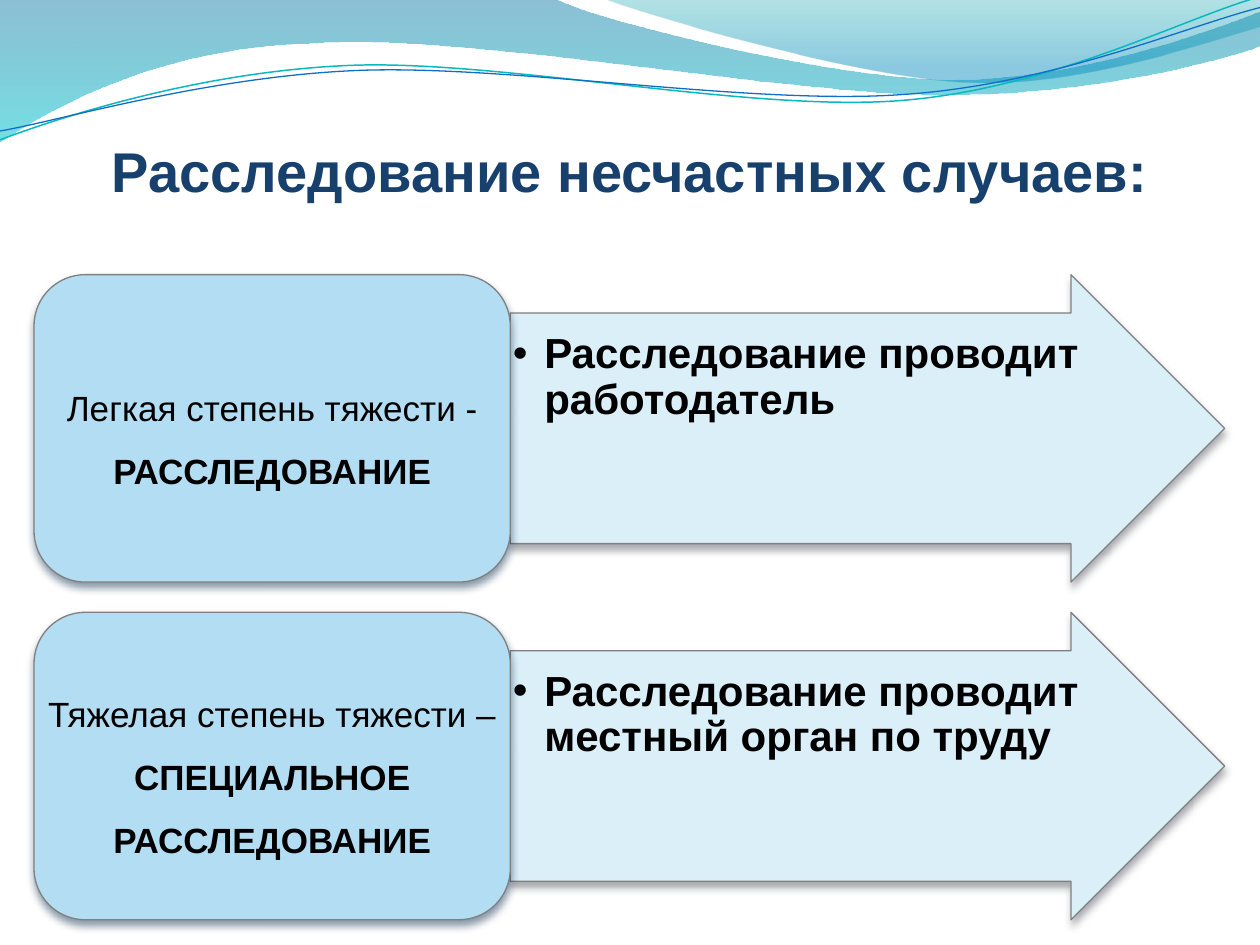
import pptx
import pptx.dml.color
import pptx.enum.shapes
import pptx.enum.text
import pptx.oxml
import pptx.oxml.ns
import pptx.util
from pptx.util import Inches

SHAPE = pptx.enum.shapes.MSO_SHAPE
ANCHOR = pptx.enum.text.MSO_ANCHOR
ALIGN = pptx.enum.text.PP_ALIGN
NAMESPACE = pptx.oxml.ns.nsdecls("a")

COLORS = {
    "title": "17406D", "text": "000000", "outline": "808080",
    "card": "B3DDF2", "arrow": "DBEFF9",
    "card_shadow": "042747", "arrow_shadow": "474B53",
    "wave_blue": "0074A1", "wave_cyan": "00C6CF",
    "crest_teal": "00A1A9", "crest_blue": "008BBF",
    "line_teal": "0AB8BF", "line_blue": "0F6FC6",
}
TITLE = "Расследование несчастных случаев:"
CASES = [
    ("Легкая степень тяжести - ", "РАССЛЕДОВАНИЕ", "Расследование проводит работодатель"),
    ("Тяжелая степень тяжести – ", "СПЕЦИАЛЬНОЕ РАССЛЕДОВАНИЕ",
     "Расследование проводит местный орган по труду"),
]

# Each outline is a list of steps: 2 numbers make a straight line, 6 a Bezier curve.
# Bands: steps, then gradient stops as (position, colour, opacity in percent).
BANDS = [
    ([(0, 0), (4.4, -0.01), (4.76, 0.17, 6.64, 0.63, 7.58, 0.63),
      (8.53, 0.63, 9.58, 0.26, 10, 0.09), (10.01, 0.36),
      (9.83, 0.44, 8.7, 0.76, 7.46, 0.75), (6.22, 0.75, 3.82, 0.28, 2.57, 0.34),
      (1.29, 0.36, 0.46, 0.83, -0.01, 1.13), (0, 0)],
     [(0, "wave_blue", 45), (1, "wave_cyan", 55)]),
    ([(4.79, -0.01), (5.09, 0.11, 6.82, 0.62, 7.69, 0.65),
      (8.56, 0.69, 9.61, 0.32, 10, 0.21), (10, 0), (4.79, -0.01)],
     [(0, "crest_teal", 30), (0.8, "crest_blue", 45)]),
]
# Strands: steps, colour, width in points.
STRANDS = [
    ([(0, 1.11), (0.48, 0.93, 1.58, 0.57, 2.77, 0.52),
      (3.95, 0.47, 5.93, 0.89, 7.13, 0.8), (8.33, 0.71, 9.38, 0.15, 9.98, -0.02)],
     "line_teal", 0.85),
    ([(0, 1.04), (0.47, 0.96, 1.64, 0.61, 2.83, 0.56),
      (4.03, 0.51, 5.97, 0.84, 7.17, 0.75), (8.36, 0.67, 9.41, 0.21, 10, 0.06)],
     "line_blue", 0.75),
]

CARD_LEFT, CARD_WIDTH, ARROW_WIDTH = 0.27, 3.78, 5.67
ROW_TOP, ROW_HEIGHT, ROW_STEP = 2.18, 2.44, 2.68


def rgb(name):
    return pptx.dml.color.RGBColor.from_string(COLORS[name])


def add_outline(page, steps, close):
    """Build a freeform through the step ends, then bend its curved segments."""
    ends = [(Inches(step[-2]), Inches(step[-1])) for step in steps]
    builder = page.shapes.build_freeform(*ends[0], scale=1.0)
    builder.add_line_segments(ends[1:], close=close)
    shape = builder.convert_to_shape()
    shape.shadow.inherit = False
    segments = list(shape.element.spPr.iter(pptx.oxml.ns.qn("a:lnTo")))
    for segment, step in zip(segments, steps[1:]):
        if len(step) == 6:
            points = "".join(
                f'<a:pt x="{Inches(x) - shape.left}" y="{Inches(y) - shape.top}"/>'
                for x, y in zip(step[::2], step[1::2]))
            curve = pptx.oxml.parse_xml(
                f'<a:cubicBezTo {NAMESPACE}>{points}</a:cubicBezTo>')
            segment.getparent().replace(segment, curve)
    return shape


def add_band(page, steps, stops):
    shape = add_outline(page, steps, True)
    shape.line.fill.background()
    shape.fill.gradient()
    shape.fill.gradient_angle = 270
    for stop, (position, color, opacity) in zip(shape.fill.gradient_stops, stops):
        stop.position = position
        stop.color.rgb = rgb(color)
    tags = list(shape.element.spPr.iter(pptx.oxml.ns.qn("a:srgbClr")))
    for tag, (position, color, opacity) in zip(tags, stops):
        tag.append(pptx.oxml.parse_xml(f'<a:alpha {NAMESPACE} val="{opacity * 1000}"/>'))


def add_strand(page, steps, color, width):
    shape = add_outline(page, steps, False)
    shape.fill.background()
    shape.line.color.rgb = rgb(color)
    shape.line.width = pptx.util.Pt(width)


def add_panel(page, kind, area, color):
    """Add a filled, outlined shape with a soft shadow below it."""
    shape = page.shapes.add_shape(kind, *map(Inches, area))
    shape.fill.solid()
    shape.fill.fore_color.rgb = rgb(color)
    shape.line.color.rgb = rgb("outline")
    shape.line.width = pptx.util.Pt(0.75)
    shape.shadow.inherit = False
    effects = shape.element.spPr.find(pptx.oxml.ns.qn("a:effectLst"))
    effects.append(pptx.oxml.parse_xml(
        f'<a:outerShdw {NAMESPACE} blurRad="57150" dist="38100" '
        f'dir="5400000" algn="ctr" rotWithShape="0">'
        f'<a:srgbClr val="{COLORS[color + "_shadow"]}"><a:alpha val="48000"/></a:srgbClr>'
        f'</a:outerShdw>'))
    return shape


def add_text(page, area, *parts, size=20, color="text", align=ALIGN.CENTER,
             anchor=ANCHOR.MIDDLE, spacing=1.5, insets=(0.08, 0.04, 0.08, 0.04),
             bullet=False):
    """Add one paragraph; each part is a (text, bold) pair."""
    box = page.shapes.add_textbox(*map(Inches, area))
    frame = box.text_frame
    frame.word_wrap = True
    frame.vertical_anchor = anchor
    (frame.margin_left, frame.margin_top,
     frame.margin_right, frame.margin_bottom) = map(Inches, insets)
    para = frame.paragraphs[0]
    para.alignment = align
    para.line_spacing = spacing
    for text, bold in parts:
        span = para.add_run()
        span.text = text
        span.font.name = "Arial"
        span.font.size = pptx.util.Pt(size)
        span.font.bold = bold
        span.font.color.rgb = rgb(color)
    if bullet:
        props = para._p.get_or_add_pPr()
        props.set("marL", str(Inches(0.25)))
        props.set("indent", str(-Inches(0.25)))
        for tag in ('buFont {} typeface="Arial"', 'buChar {} char="•"'):
            props.append(pptx.oxml.parse_xml(f"<a:{tag.format(NAMESPACE)}/>"))


def main():
    deck = pptx.Presentation()
    deck.slide_width, deck.slide_height = Inches(10), Inches(7.5)
    page = deck.slides.add_slide(deck.slide_layouts[6])

    for band in BANDS:
        add_band(page, *band)
    for strand in STRANDS:
        add_strand(page, *strand)

    add_text(page, (0.5, 0.77, 9, 0.85), (TITLE, True), size=32, color="title",
             anchor=ANCHOR.BOTTOM, insets=(0, 0.05, 0, 0))

    for row, (severity, procedure, investigator) in enumerate(CASES):
        top = ROW_TOP + row * ROW_STEP
        card_area = (CARD_LEFT, top, CARD_WIDTH, ROW_HEIGHT)
        arrow_area = (CARD_LEFT + CARD_WIDTH, top, ARROW_WIDTH, ROW_HEIGHT)
        arrow = add_panel(page, SHAPE.RIGHT_ARROW, arrow_area, "arrow")
        arrow.adjustments[0] = 0.75
        add_text(page, arrow_area, (investigator, True), size=24, align=ALIGN.LEFT,
                 anchor=ANCHOR.TOP, spacing=0.9, insets=(0.02, 0.46, 0.02, 0.02),
                 bullet=True)
        add_panel(page, SHAPE.ROUNDED_RECTANGLE, card_area, "card")
        add_text(page, card_area, (severity, False), (procedure, True))

    deck.save("out.pptx")


if __name__ == "__main__":
    main()
